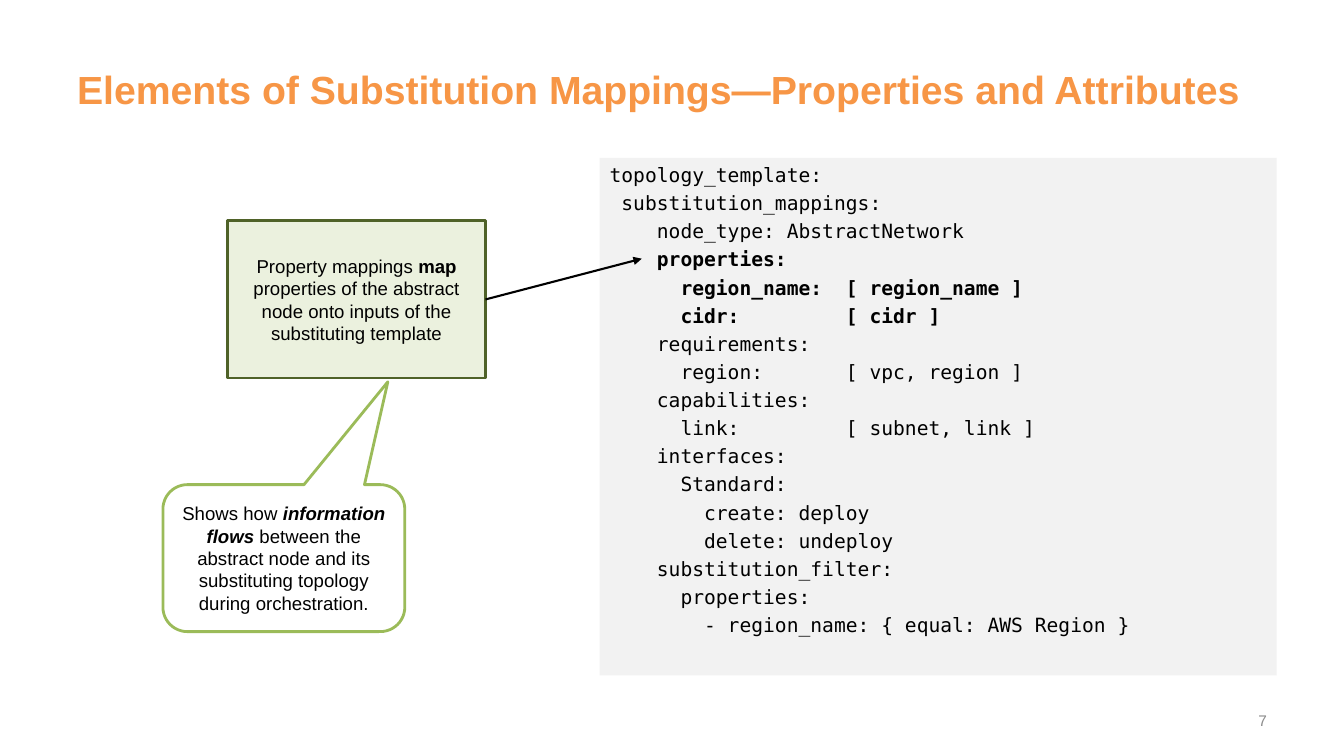
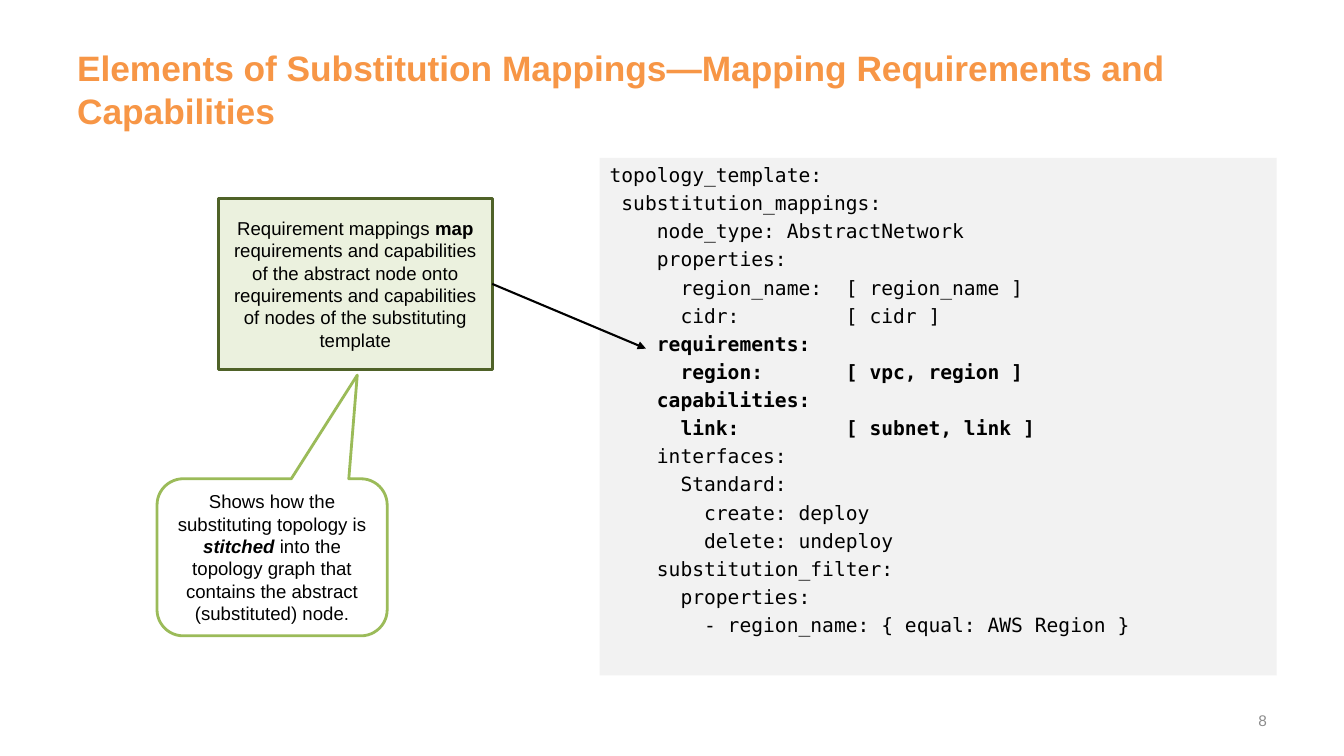
import dataclasses

import pptx
import pptx.dml.color
import pptx.enum.shapes
import pptx.enum.text
import pptx.oxml.ns
import pptx.util
from lxml import etree

ALIGN = pptx.enum.text.PP_ALIGN
ANCHOR = pptx.enum.text.MSO_ANCHOR
SHAPE = pptx.enum.shapes.MSO_SHAPE


@dataclasses.dataclass(frozen=True)
class Theme:
    """Colours, fonts and type sizes; the grid has square cells."""
    title: str = "F79646"
    text: str = "000000"
    number: str = "8C8C8C"
    code_fill: str = "F2F2F2"
    box_fill: str = "EBF1DE"
    box_line: str = "4F6228"
    callout_fill: str = "FFFFFF"
    callout_line: str = "9BBB59"
    font: str = "Arial"
    mono: str = "DejaVu Sans Mono"
    code_size: float = 14
    note_size: float = 13.3
    number_size: float = 11
    code_gap: float = 3.3
    outline: float = 2
    arrow: float = 1.5
    columns: int = 80
    rows: int = 45


class Deck:
    def __init__(self, theme):
        self.theme = theme
        self.prs = pptx.Presentation()
        self.prs.slide_width = pptx.util.Inches(13.33)
        self.prs.slide_height = pptx.util.Inches(7.5)
        self.s = None

    def new_slide(self):
        self.s = self.prs.slides.add_slide(self.prs.slide_layouts[6])

    # Grid and style helpers
    def x(self, columns):
        return round(self.prs.slide_width * columns / self.theme.columns)

    def y(self, rows):
        return round(self.prs.slide_height * rows / self.theme.rows)

    def place(self, at):
        left, top, width, height = at
        return self.x(left), self.y(top), self.x(width), self.y(height)

    @staticmethod
    def rgb(colour):
        return pptx.dml.color.RGBColor.from_string(colour)

    def frame(self, sp, anchor):
        tf = sp.text_frame
        tf.word_wrap = True
        tf.vertical_anchor = anchor
        return tf

    def add_runs(self, p, runs, size, colour, font=None, align=ALIGN.LEFT):
        """Write (text, style) runs; style holds b for bold, i for italic."""
        p.alignment = align
        for text, style in runs:
            r = p.add_run()
            r.text = text
            r.font.name = font or self.theme.font
            r.font.size = pptx.util.Pt(size)
            r.font.color.rgb = self.rgb(colour)
            r.font.bold = "b" in style
            r.font.italic = "i" in style

    # Elements
    def label(self, at, text, size, colour, style="", align=ALIGN.LEFT):
        sp = self.s.shapes.add_textbox(*self.place(at))
        tf = self.frame(sp, ANCHOR.MIDDLE)
        self.add_runs(tf.paragraphs[0], [(text, style)], size, colour, align=align)

    def title(self, text, size):
        self.label((4, 2.7, 72, 5.2), text, size, self.theme.title, "b")

    def page_number(self, number):
        self.label((57.35, 41.7, 18.65, 2.4), str(number),
                   self.theme.number_size, self.theme.number, align=ALIGN.RIGHT)

    def shape(self, kind, at, fill, line=None):
        sp = self.s.shapes.add_shape(kind, *self.place(at))
        sp.shadow.inherit = False
        sp.fill.solid()
        sp.fill.fore_color.rgb = self.rgb(fill)
        if line:
            sp.line.color.rgb = self.rgb(line)
            sp.line.width = pptx.util.Pt(self.theme.outline)
        else:
            sp.line.fill.background()
        return sp

    def code(self, lines, bold_lines):
        t = self.theme
        sp = self.shape(SHAPE.RECTANGLE, (35.7, 9.4, 40.3, 30.8), t.code_fill)
        tf = self.frame(sp, ANCHOR.TOP)
        for i, line in enumerate(lines):
            p = tf.add_paragraph() if i else tf.paragraphs[0]
            p.space_before = pptx.util.Pt(t.code_gap if i else 0)
            style = "b" if i in bold_lines else ""
            self.add_runs(p, [(line, style)], t.code_size, t.text, t.mono)

    def note(self, sp, runs):
        tf = self.frame(sp, ANCHOR.MIDDLE)
        self.add_runs(tf.paragraphs[0], runs, self.theme.note_size,
                      self.theme.text, align=ALIGN.CENTER)
        return sp

    def box(self, at, runs):
        t = self.theme
        return self.note(
            self.shape(SHAPE.RECTANGLE, at, t.box_fill, t.box_line), runs)

    def callout(self, at, tip, runs):
        t = self.theme
        sp = self.shape(SHAPE.ROUNDED_RECTANGULAR_CALLOUT, at,
                        t.callout_fill, t.callout_line)
        sp.adjustments[0], sp.adjustments[1] = tip
        return self.note(sp, runs)

    def arrow(self, box, column, row):
        """Draw an arrow from the box's right side to a grid point."""
        end = self.x(column), self.y(row)
        line = self.s.shapes.add_connector(
            pptx.enum.shapes.MSO_CONNECTOR.STRAIGHT,
            box.left + box.width, box.top + box.height // 2, *end)
        line.begin_connect(box, 3)
        line.line.color.rgb = self.rgb(self.theme.text)
        line.line.width = pptx.util.Pt(self.theme.arrow)
        qn = pptx.oxml.ns.qn
        etree.SubElement(line.line._get_or_add_ln(), qn("a:tailEnd"), type="triangle")
        etree.SubElement(line._element.spPr, qn("a:effectLst"))


TEMPLATE = """topology_template:
 substitution_mappings:
    node_type: AbstractNetwork
    properties:
      region_name:  [ region_name ]
      cidr:         [ cidr ]
    requirements:
      region:       [ vpc, region ]
    capabilities:
      link:         [ subnet, link ]
    interfaces:
      Standard:
        create: deploy
        delete: undeploy
    substitution_filter:
      properties:
        - region_name: { equal: AWS Region }""".splitlines()

SLIDES = [
    dict(
        title=("Elements of Substitution Mappings—Properties and Attributes", 28),
        bold_lines=range(3, 6),
        box=((13.55, 13.15, 15.35, 9.35), [
            ("Property mappings ", ""), ("map", "b"),
            (" properties of the abstract node onto inputs of the "
             "substituting template", "")]),
        target=(38.2, 15.4),
        callout=((9.7, 28.85, 14.4, 8.75), (0.43, -1.2), [
            ("Shows how ", ""), ("information flows ", "bi"),
            ("between the abstract node and its substituting topology "
             "during orchestration.", "")]),
    ),
    dict(
        title=("Elements of Substitution Mappings—Mapping Requirements "
               "and Capabilities", 25.2),
        bold_lines=range(6, 10),
        box=((13, 11.8, 16.3, 10.2), [
            ("Requirement mappings ", ""), ("map", "b"),
            (" requirements and capabilities of the abstract node onto "
             "requirements and capabilities of nodes of the substituting "
             "template", "")]),
        target=(38.45, 20.75),
        callout=((9.35, 28.5, 13.7, 9.35), (0.37, -1.16), [
            ("Shows how the substituting topology is ", ""),
            ("stitched", "bi"),
            (" into the topology graph that contains the abstract "
             "(substituted) node.", "")]),
    ),
]


def main():
    deck = Deck(Theme())
    for number, content in enumerate(SLIDES, start=7):
        deck.new_slide()
        deck.title(*content["title"])
        deck.code(TEMPLATE, content["bold_lines"])
        deck.page_number(number)
        box = deck.box(*content["box"])
        deck.arrow(box, *content["target"])
        deck.callout(*content["callout"])
    deck.prs.save("out.pptx")


if __name__ == "__main__":
    main()
